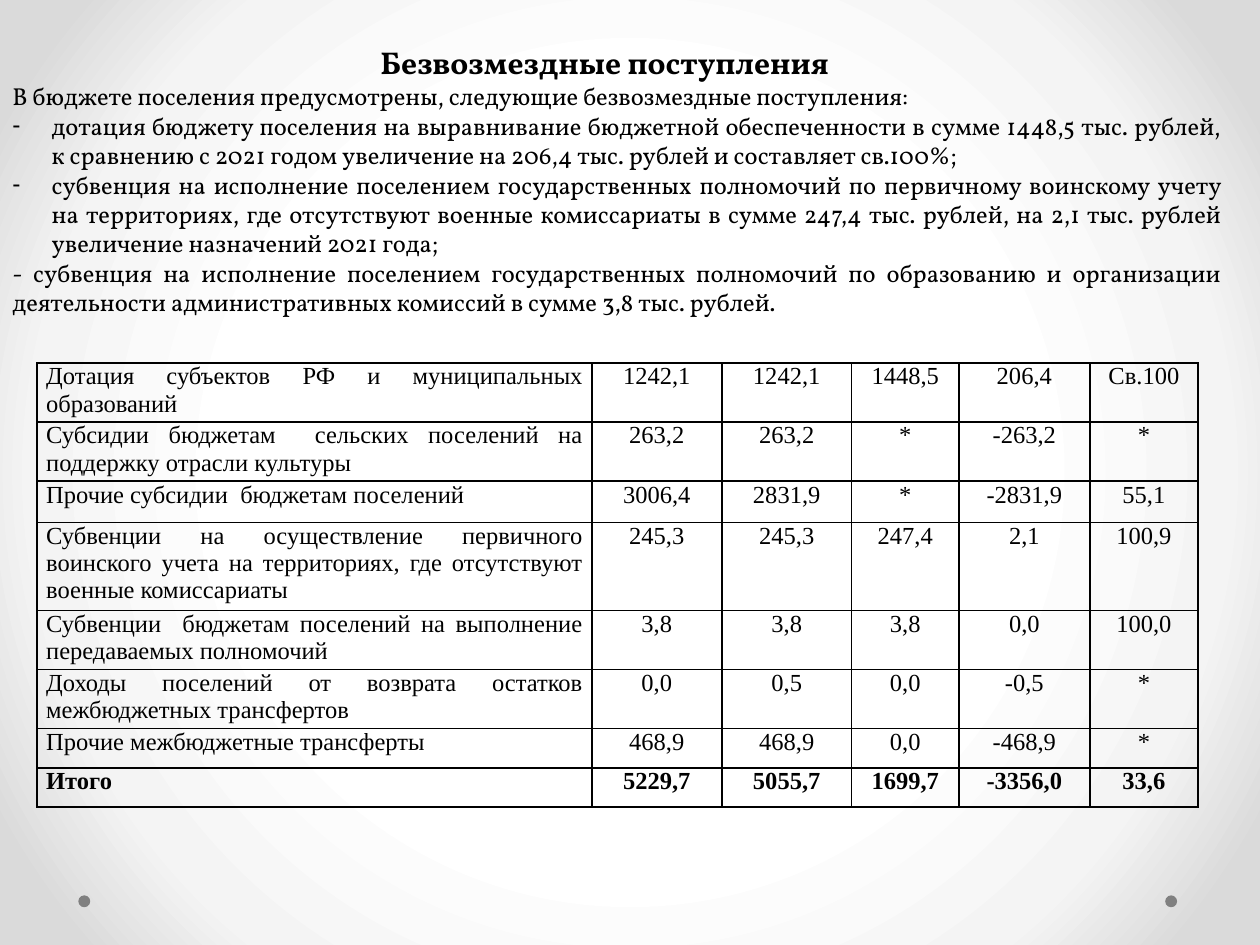
from dataclasses import dataclass

from lxml.etree import SubElement
from pptx import Presentation
from pptx.dml.color import RGBColor
from pptx.enum.shapes import MSO_SHAPE
from pptx.enum.text import MSO_ANCHOR, MSO_AUTO_SIZE, PP_ALIGN
from pptx.oxml import parse_xml
from pptx.oxml.ns import nsdecls, qn
from pptx.util import Cm, Pt

BLACK, GREY = "000000", "808080"
BODY_FONT, TABLE_FONT = "Vollkorn", "Times New Roman"
BULLET_INDENT = Cm(0.79)
BACKGROUND_STOPS = {50: "FFFFFF", 76: "F4F4F4", 92: "DADADA"}
COLUMN_WIDTHS = (11.18, 2.62, 2.62, 2.16, 2.64, 2.18)
FRAME_FORMAT = {
    "word_wrap": True, "auto_size": MSO_AUTO_SIZE.NONE,
    "vertical_anchor": MSO_ANCHOR.TOP, "margin_left": Cm(0.25),
    "margin_right": Cm(0.25), "margin_top": 0, "margin_bottom": 0,
}
CELL_FORMAT = {
    "margin_left": Cm(0.18), "margin_right": Cm(0.18), "margin_top": 0,
    "margin_bottom": 0, "vertical_anchor": MSO_ANCHOR.TOP,
}


@dataclass
class Item:
    text: str
    bulleted: bool = False


@dataclass
class Income:
    name: str
    values: tuple
    height: float = 1.19
    bold: bool = False


TITLE = "Безвозмездные поступления"
ITEMS = [
    Item("В бюджете поселения предусмотрены, следующие безвозмездные поступления:"),
    Item("дотация бюджету поселения на выравнивание бюджетной обеспеченности "
         "в сумме 1448,5 тыс. рублей, к сравнению с 2021 годом увеличение "
         "на 206,4 тыс. рублей и составляет св.100%;", True),
    Item("субвенция на исполнение поселением государственных полномочий "
         "по первичному воинскому учету на территориях, где отсутствуют "
         "военные комиссариаты в сумме 247,4 тыс. рублей, на 2,1 тыс. рублей "
         "увеличение назначений 2021 года;", True),
    Item("- субвенция на исполнение поселением государственных полномочий "
         "по образованию и организации деятельности административных "
         "комиссий в сумме 3,8 тыс. рублей."),
]
INCOMES = [
    Income("Дотация субъектов РФ и муниципальных образований",
           ("1242,1", "1242,1", "1448,5", "206,4", "Св.100")),
    Income("Субсидии бюджетам  сельских поселений на поддержку отрасли культуры",
           ("263,2", "263,2", "*", "-263,2", "*")),
    Income("Прочие субсидии  бюджетам поселений",
           ("3006,4", "2831,9", "*", "-2831,9", "55,1"), 0.83),
    Income("Субвенции на осуществление первичного воинского учета "
           "на территориях, где отсутствуют военные комиссариаты",
           ("245,3", "245,3", "247,4", "2,1", "100,9"), 1.78),
    Income("Субвенции  бюджетам поселений на выполнение передаваемых полномочий",
           ("3,8", "3,8", "3,8", "0,0", "100,0")),
    Income("Доходы поселений от возврата остатков межбюджетных трансфертов",
           ("0,0", "0,5", "0,0", "-0,5", "*")),
    Income("Прочие межбюджетные трансферты",
           ("468,9", "468,9", "0,0", "-468,9", "*"), 0.79),
    Income("Итого", ("5229,7", "5055,7", "1699,7", "-3356,0", "33,6"), 0.79, True),
]


def rgb(value: str) -> RGBColor:
    return RGBColor.from_string(value)


def apply(target, settings: dict) -> None:
    for name, value in settings.items():
        setattr(target, name, value)


def place(shape, left: float, top: float, width: float, height: float) -> None:
    apply(shape, {"left": Cm(left), "top": Cm(top),
                  "width": Cm(width), "height": Cm(height)})


def write(paragraph, text: str, font: str, size: int, align, bold=False) -> None:
    apply(paragraph, {"alignment": align, "line_spacing": 1.0,
                      "space_before": Pt(0), "space_after": Pt(0)})
    run = paragraph.add_run()
    run.text = text
    apply(run.font, {"name": font, "size": Pt(size), "bold": bold})
    run.font.color.rgb = rgb(BLACK)


def set_bullet(paragraph, bulleted: bool) -> None:
    properties = paragraph._p.get_or_add_pPr()
    indent = BULLET_INDENT if bulleted else 0
    properties.set("marL", str(indent))
    properties.set("indent", str(-indent))
    if bulleted:
        SubElement(properties, qn("a:buChar")).set("char", "-")
    else:
        SubElement(properties, qn("a:buNone"))


def set_background(slide) -> None:
    """Fill the slide with a circular gradient from its centre."""
    stops = "".join(
        f'<a:gs pos="{position * 1000}"><a:srgbClr val="{color}"/></a:gs>'
        for position, color in BACKGROUND_STOPS.items())
    background = parse_xml(
        f'<p:bg {nsdecls("p", "a")}><p:bgPr><a:gradFill rotWithShape="1">'
        f'<a:gsLst>{stops}</a:gsLst><a:path path="circle">'
        '<a:fillToRect l="50000" t="50000" r="50000" b="50000"/></a:path>'
        '</a:gradFill><a:effectLst/></p:bgPr></p:bg>')
    slide.element.cSld.insert(0, background)


def add_dot(slide, left: float) -> None:
    dot = slide.shapes.add_shape(
        MSO_SHAPE.OVAL, Cm(left), Cm(18.05), Cm(0.24), Cm(0.24))
    dot.shadow.inherit = False
    dot.fill.solid()
    dot.fill.fore_color.rgb = rgb(GREY)
    dot.line.fill.background()


def set_borders(cell) -> None:
    properties = cell._tc.get_or_add_tcPr()
    for index, side in enumerate(("lnL", "lnR", "lnT", "lnB")):
        properties.insert(index, parse_xml(
            f'<a:{side} {nsdecls("a")} w="{Pt(1)}"><a:solidFill>'
            f'<a:srgbClr val="{BLACK}"/></a:solidFill></a:{side}>'))


def fill_text(slide) -> None:
    title, body = slide.placeholders
    place(title, 0, 0.74, 24.38, 0.89)
    place(body, 0, 1.64, 24.89, 4.92)
    for shape in (title, body):
        apply(shape.text_frame, FRAME_FORMAT)
    title.text_frame.margin_top = Cm(0.13)
    write(title.text_frame.paragraphs[0], TITLE, BODY_FONT, 18,
          PP_ALIGN.CENTER, True)
    frame = body.text_frame
    for index, item in enumerate(ITEMS):
        paragraph = frame.add_paragraph() if index else frame.paragraphs[0]
        write(paragraph, item.text, BODY_FONT, 14, PP_ALIGN.JUSTIFY)
        set_bullet(paragraph, item.bulleted)


def add_income_table(slide) -> None:
    height = sum(income.height for income in INCOMES)
    table = slide.shapes.add_table(
        len(INCOMES), len(COLUMN_WIDTHS), Cm(0.75), Cm(7.32),
        Cm(sum(COLUMN_WIDTHS)), Cm(height)).table
    apply(table, {"first_row": False, "horz_banding": False})
    for column, width in zip(table.columns, COLUMN_WIDTHS):
        column.width = Cm(width)
    for row, income in zip(table.rows, INCOMES):
        row.height = Cm(income.height)
        for index, text in enumerate((income.name, *income.values)):
            cell = row.cells[index]
            apply(cell, CELL_FORMAT)
            cell.fill.background()
            set_borders(cell)
            align = PP_ALIGN.CENTER if index else PP_ALIGN.JUSTIFY
            write(cell.text_frame.paragraphs[0], text, TABLE_FONT, 14,
                  align, income.bold)


def main() -> None:
    presentation = Presentation()
    apply(presentation, {"slide_width": Cm(25.4), "slide_height": Cm(19.05)})
    slide = presentation.slides.add_slide(presentation.slide_layouts[1])
    set_background(slide)
    for left in (23.49, 1.58):
        add_dot(slide, left)
    fill_text(slide)
    add_income_table(slide)
    presentation.save("out.pptx")


if __name__ == "__main__":
    main()
